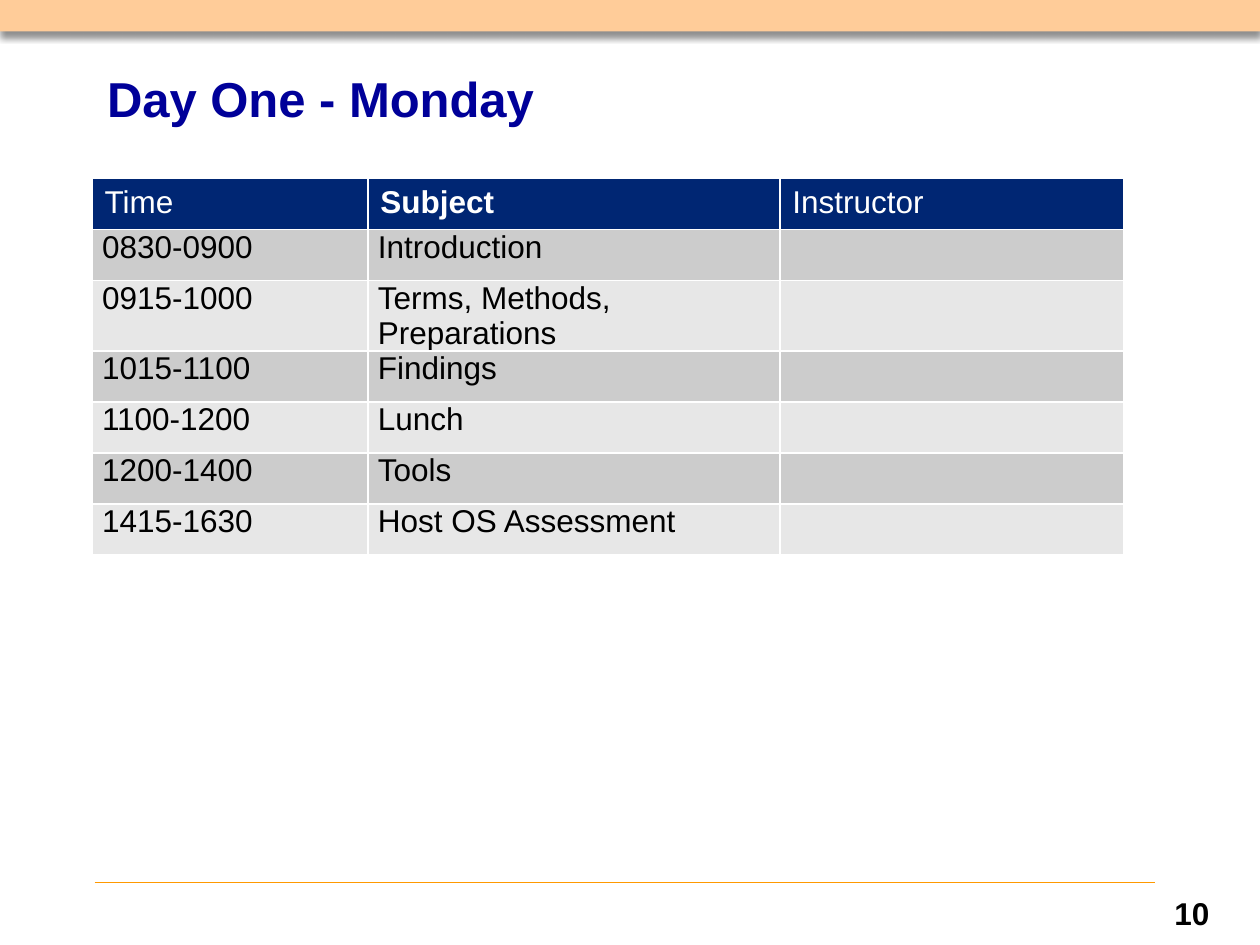
from lxml import etree
from pptx import Presentation
from pptx import util as u
from pptx.dml.color import RGBColor
from pptx.enum import shapes, text
from pptx.oxml import parse_xml
from pptx.oxml.ns import qn, nsdecls

hues = {"peach": "FFCC99", "rule": "FF9900", "title": "000099", "head": "002673",
        "dark": "CCCCCC", "light": "E7E7E7", "white": "FFFFFF", "black": "000000"}


def hue(name):
    return RGBColor.from_string(hues[name])


def write(par, words, size, name, bold):
    run = par.add_run()
    run.text = words
    run.font.name = "Arial"
    run.font.size = u.Pt(size)
    run.font.bold = bold
    run.font.color.rgb = hue(name)


deck = Presentation()
deck.slide_width, deck.slide_height = u.Inches(10), u.Inches(7.5)
wide, high = deck.slide_width, deck.slide_height
slide = deck.slides.add_slide(deck.slide_layouts[5])
left, right, foot = int(wide * 0.075), int(wide * 0.917), int(high * 14 / 15)

rule = slide.shapes.add_connector(shapes.MSO_CONNECTOR.STRAIGHT, left, foot, right, foot)
rule.line.color.rgb = hue("rule")
rule.line.width = u.Pt(0.5)
etree.SubElement(rule._element.spPr, qn("a:effectLst"))

band = slide.shapes.add_shape(shapes.MSO_SHAPE.RECTANGLE, 0, 0, wide, high // 30)
band.fill.solid()
band.fill.fore_color.rgb = hue("peach")
band.line.fill.background()
band.shadow.inherit = False
glow = band._element.spPr.find(qn("a:effectLst"))
glow.append(parse_xml(
    f'<a:outerShdw {nsdecls("a")} blurRad="{u.Pt(4)}" dist="{u.Pt(3)}" dir="5400000" rotWithShape="0">'
    f'<a:srgbClr val="{hues["black"]}"><a:alpha val="43000"/></a:srgbClr></a:outerShdw>'))

title = slide.shapes.title
title.left, title.top = left, int(high * 0.04)
title.width, title.height = right - left, int(high * 0.137)
frame = title.text_frame
frame.auto_size = text.MSO_AUTO_SIZE.NONE
frame.vertical_anchor = text.MSO_ANCHOR.MIDDLE
par = frame.paragraphs[0]
par.alignment = text.PP_ALIGN.LEFT
par.line_spacing = u.Pt(28)
write(par, "Day One - Monday", 28, "title", True)

rows = [("Time", "Subject", "Instructor"),
        ("0830-0900", "Introduction", ""),
        ("0915-1000", "Terms, Methods, Preparations", ""),
        ("1015-1100", "Findings", ""),
        ("1100-1200", "Lunch", ""),
        ("1200-1400", "Tools", ""),
        ("1415-1630", "Host OS Assessment", "")]
cols = [0.219, 0.327, 0.273]
step = int(high * 0.054)
grid = slide.shapes.add_table(len(rows), len(cols), int(wide * 0.073), int(high * 0.189),
                              int(wide * sum(cols)), step * len(rows)).table
for col, share in zip(grid.columns, cols):
    col.width = int(wide * share)
for r, row in enumerate(rows):
    grid.rows[r].height = step
    for c, words in enumerate(row):
        cell = grid.cell(r, c)
        if r:
            cell.margin_left = cell.margin_right = u.Inches(0.08)
            cell.margin_top = cell.margin_bottom = 0
        for side in ("lnL", "lnR", "lnT", "lnB"):
            cell._tc.get_or_add_tcPr().append(parse_xml(
                f'<a:{side} {nsdecls("a")} w="{u.Pt(1)}"><a:solidFill>'
                f'<a:srgbClr val="{hues["white"]}"/></a:solidFill></a:{side}>'))
        cell.fill.solid()
        cell.fill.fore_color.rgb = hue("head" if r == 0 else "dark" if r % 2 else "light")
        par = cell.text_frame.paragraphs[0]
        par.alignment = text.PP_ALIGN.LEFT
        if words:
            write(par, words, 18, "black" if r else "white", words == "Subject")
        else:
            par.font.size = u.Pt(18)

page = slide.shapes.add_textbox(right, foot, int(wide * 0.058), int(high * 0.023))
page.text_frame.word_wrap = True
par = page.text_frame.paragraphs[0]
par.alignment = text.PP_ALIGN.CENTER
par.line_spacing = u.Pt(25)
par.space_after = u.Pt(10)
write(par, "10", 18, "black", True)

deck.save("out.pptx")
